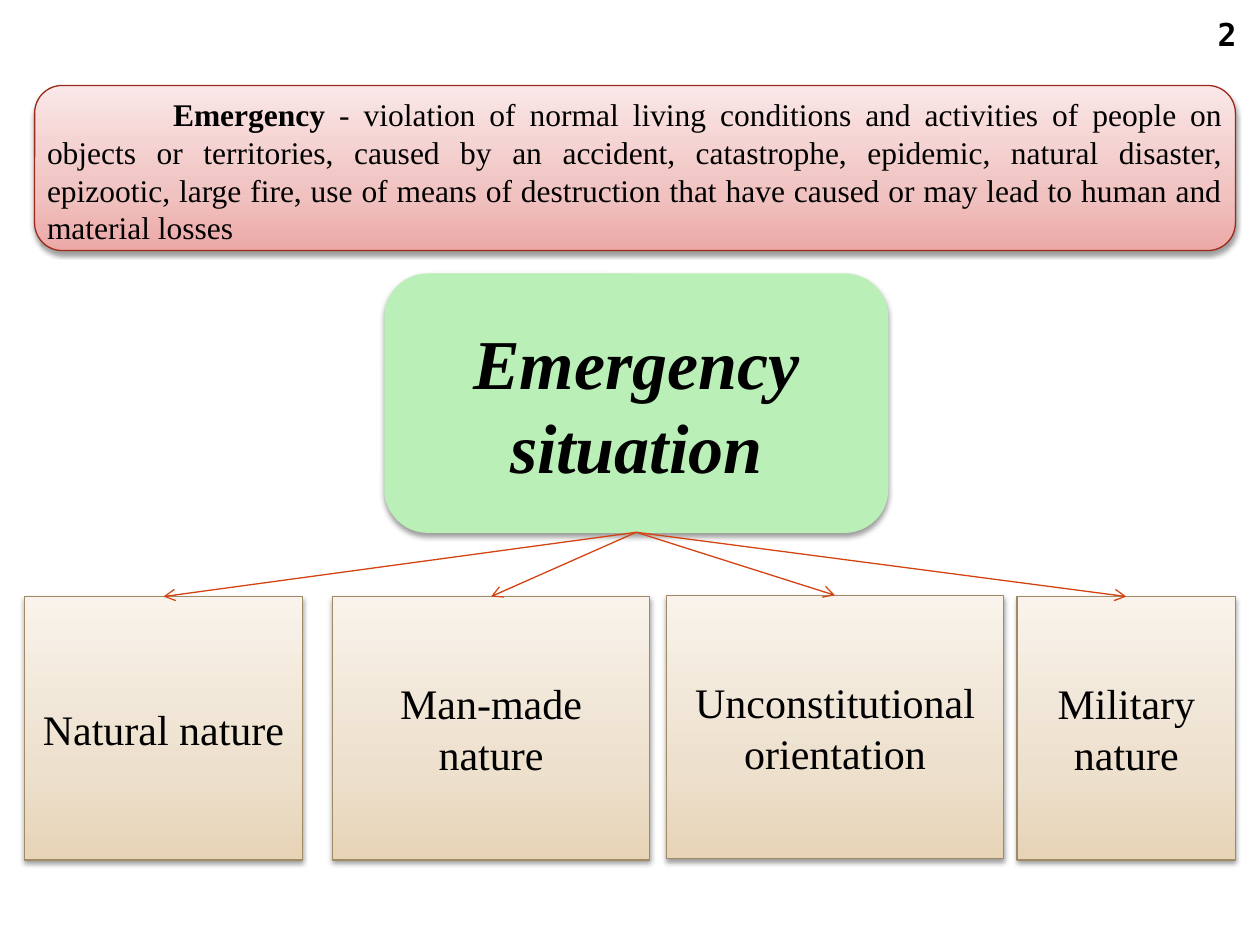
from copy import deepcopy

from lxml import etree
from pptx import Presentation
from pptx.dml.color import RGBColor
from pptx.enum.shapes import MSO_CONNECTOR, MSO_SHAPE
from pptx.enum.text import MSO_ANCHOR, MSO_AUTO_SIZE, PP_ALIGN
from pptx.oxml import parse_xml
from pptx.oxml.ns import nsdecls, qn
from pptx.util import Inches, Pt

ELLIPSE, RECTANGLE, ROUNDED = MSO_SHAPE.OVAL, MSO_SHAPE.RECTANGLE, MSO_SHAPE.ROUNDED_RECTANGLE
STRAIGHT = MSO_CONNECTOR.STRAIGHT
CENTER, JUSTIFY = PP_ALIGN.CENTER, PP_ALIGN.JUSTIFY
MIDDLE = MSO_ANCHOR.MIDDLE
GROW = MSO_AUTO_SIZE.SHAPE_TO_FIT_TEXT

WIDTH, HEIGHT = Inches(10), Inches(7.5)
BLACK = RGBColor(0x00, 0x00, 0x00)
GREEN = RGBColor(0xBA, 0xEF, 0xB7)
ARROW_RED = RGBColor(0xD3, 0x44, 0x12)
BANNER_LINE = RGBColor(0x9B, 0x2A, 0x1B)
CARD_LINE = RGBColor(0xA0, 0x8B, 0x66)
BANNER_FADE = (RGBColor(0xEC, 0xA8, 0xA6), RGBColor(0xF0, 0xC3, 0xC1), RGBColor(0xFA, 0xE7, 0xE7))
CARD_FADE = (RGBColor(0xE7, 0xD4, 0xB7), RGBColor(0xED, 0xE0, 0xCD), RGBColor(0xF9, 0xF3, 0xEB))
FADE_STOPS = (0, 0.35, 1)
LINE_WIDTH = Pt(0.75)

SERIF = {"name": "Times New Roman", "size": Pt(18), "bold": False}
NUMBER = {"name": "DejaVu Sans Mono", "size": Pt(18), "bold": True}
TITLE = {**SERIF, "size": Pt(40), "bold": True, "italic": True}
CARD = {**SERIF, "size": Pt(24)}

NUMBER_AREA = (95.2, 0.67, 4.4, 5.87)
BANNER_AREA = (2.75, 9.05, 95.3, 17.47)
DEFINITION_AREA = (2.75, 9.4, 95.3, 17.47)
DEFINITION_TAB = 10
TITLE_AREA = (30.55, 29, 39.9, 27.33)
CARD_HEIGHT = 27.87
CARDS = (
    ("Natural nature", 1.95, 63.13, 22.05),
    ("Man-made nature", 26.4, 63.13, 25.15),
    ("Unconstitutional orientation", 52.9, 63, 26.75),
    ("Military nature", 80.72, 63.13, 17.35),
)
DEFINITION = (
    ("\t", SERIF),
    ("Emergency", {**SERIF, "bold": True}),
    (" - violation of normal living conditions and activities of people on objects or "
     "territories, caused by an accident, catastrophe, epidemic, natural disaster, epizootic, "
     "large fire, use of means of destruction that have caused or may lead to human and "
     "material losses", SERIF),
)


def across(share):
    return round(WIDTH * share / 100)


def down(share):
    return round(HEIGHT * share / 100)


def place(area):
    left, top, width, height = area
    return across(left), down(top), across(width), down(height)


def write(frame, spans, alignment):
    frame.word_wrap = True
    para = frame.paragraphs[0]
    para.alignment = alignment
    for text, style in spans:
        span = para.add_run()
        span.text = text
        span.font.color.rgb = BLACK
        for name, value in style.items():
            setattr(span.font, name, value)


def fade(shape, colors):
    shape.fill.gradient()
    shape.fill.gradient_angle = 90
    first_stop = next(shape.element.spPr.iter(qn("a:gs")))
    first_stop.addnext(deepcopy(first_stop))
    for stop, position, color in zip(shape.fill.gradient_stops, FADE_STOPS, colors):
        stop.position = position
        stop.color.rgb = color


def cast_shadow(shape):
    effects = shape.element.spPr.find(qn("a:effectLst"))
    effects.append(parse_xml(
        f'<a:outerShdw {nsdecls("a")} blurRad="{Pt(3.1)}" dist="{Pt(1.6)}" dir="5400000" '
        'rotWithShape="0"><a:srgbClr val="000000"><a:alpha val="38000"/></a:srgbClr>'
        '</a:outerShdw>'))


def add_panel(page, kind, area, fill, outline):
    shape = page.shapes.add_shape(kind, *place(area))
    if isinstance(fill, RGBColor):
        shape.fill.solid()
        shape.fill.fore_color.rgb = fill
    else:
        fade(shape, fill)
    shape.line.color.rgb = outline
    shape.line.width = LINE_WIDTH
    shape.shadow.inherit = False
    cast_shadow(shape)
    return shape


def add_label(shape, text, style):
    shape.text_frame.vertical_anchor = MIDDLE
    write(shape.text_frame, [(text, style)], CENTER)


def add_page_number(page, text):
    badge = page.shapes.add_shape(ELLIPSE, *place(NUMBER_AREA))
    badge.fill.background()
    badge.line.fill.background()
    badge.shadow.inherit = False
    for side in ("left", "top", "right", "bottom"):
        setattr(badge.text_frame, f"margin_{side}", 0)
    add_label(badge, text, NUMBER)


def add_definition(page):
    add_panel(page, ROUNDED, BANNER_AREA, BANNER_FADE, BANNER_LINE)
    box = page.shapes.add_textbox(*place(DEFINITION_AREA))
    box.text_frame.auto_size = GROW
    write(box.text_frame, DEFINITION, JUSTIFY)
    properties = next(box.element.iter(qn("a:pPr")))
    tabs = etree.SubElement(properties, qn("a:tabLst"))
    etree.SubElement(tabs, qn("a:tab"), pos=str(across(DEFINITION_TAB)), algn="l")


def add_arrow(page, source, target):
    arrow = page.shapes.add_connector(STRAIGHT, 0, 0, 0, 0)
    arrow.begin_connect(source, 2)
    arrow.end_connect(target, 0)
    arrow.line.color.rgb = ARROW_RED
    arrow.line.width = LINE_WIDTH
    properties = arrow.element.spPr
    etree.SubElement(properties.find(qn("a:ln")), qn("a:tailEnd"), type="arrow")
    etree.SubElement(properties, qn("a:effectLst"))


def main():
    deck = Presentation()
    deck.slide_width, deck.slide_height = WIDTH, HEIGHT
    page = deck.slides.add_slide(deck.slide_layouts[6])
    add_page_number(page, "2")
    add_definition(page)
    title = add_panel(page, ROUNDED, TITLE_AREA, GREEN, GREEN)
    add_label(title, "Emergency situation", TITLE)
    cards = []
    for text, left, top, width in CARDS:
        card = add_panel(page, RECTANGLE, (left, top, width, CARD_HEIGHT), CARD_FADE, CARD_LINE)
        add_label(card, text, CARD)
        cards.append(card)
    for card in cards:
        add_arrow(page, title, card)
    deck.save("out.pptx")


if __name__ == "__main__":
    main()
